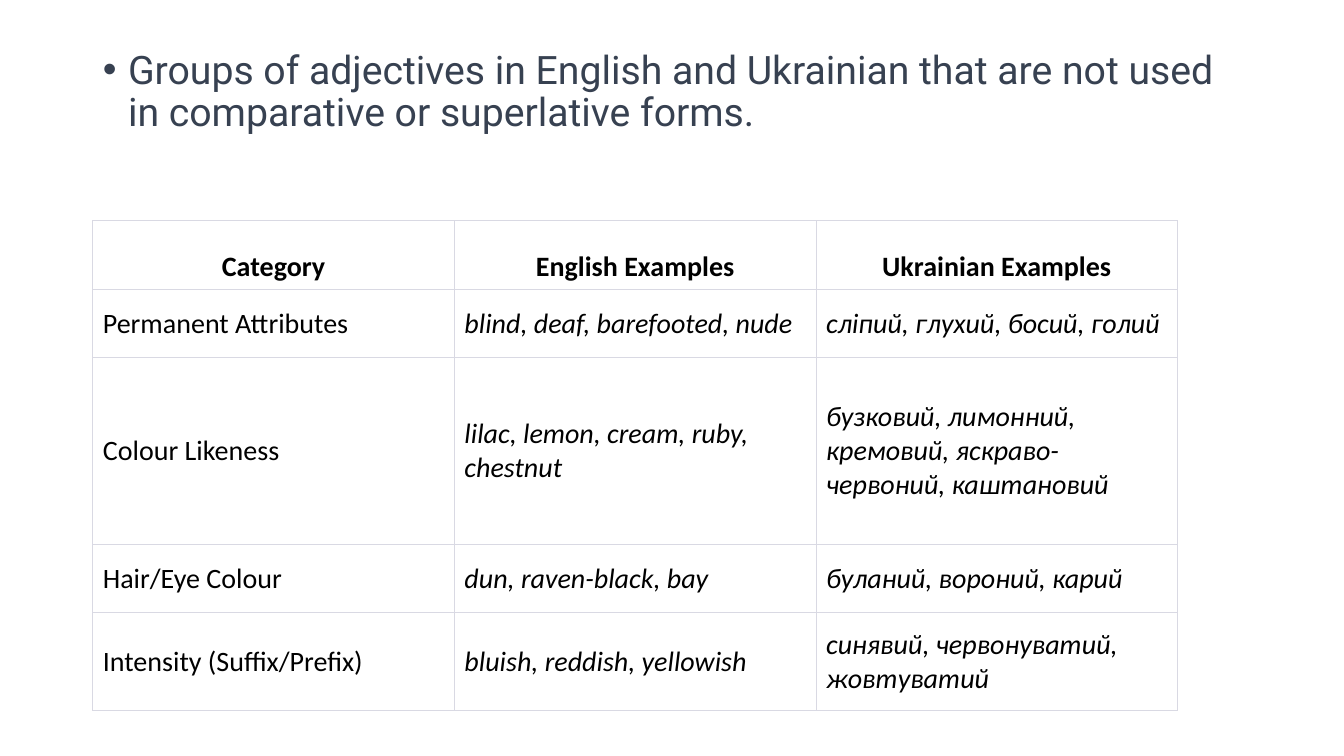
from dataclasses import dataclass

from pptx import Presentation
from pptx import util as u
from pptx.dml.color import RGBColor
from pptx.enum import text
from pptx.oxml import parse_xml
from pptx.oxml.ns import nsdecls


@dataclass(frozen=True)
class Theme:
    heading_font: str = "Roboto"
    table_font: str = "Calibri"
    heading_size: int = 28
    table_size: int = 20
    heading_color: str = "374151"
    table_color: str = "000000"
    border_color: str = "D9D9E3"
    side_border: float = 0.75
    row_border: float = 1


THEME = Theme()

HEADING = ("Groups of adjectives in English and Ukrainian that are not used "
           "in comparative or superlative forms.")
ROWS = [
    ("Category", "English Examples", "Ukrainian Examples"),
    ("Permanent Attributes", "blind, deaf, barefooted, nude",
     "сліпий, глухий, босий, голий"),
    ("Colour Likeness", "lilac, lemon, cream, ruby, chestnut",
     "бузковий, лимонний, кремовий, яскраво-червоний, каштановий"),
    ("Hair/Eye Colour", "dun, raven-black, bay", "буланий, вороний, карий"),
    ("Intensity (Suffix/Prefix)", "bluish, reddish, yellowish",
     "синявий, червонуватий, жовтуватий"),
]
ROW_HEIGHTS = [0.68, 0.68, 1.85, 0.68, 0.97]


def style_font(font, name, size, color):
    font.name = name
    font.size = u.Pt(size)
    font.color.rgb = RGBColor.from_string(color)


def add_bullet(paragraph, indent):
    """Give the paragraph a round bullet hanging by the indent."""
    properties = paragraph._p.get_or_add_pPr()
    properties.set("marL", str(indent))
    properties.set("indent", str(-indent))
    properties.append(parse_xml(f'<a:buFont {nsdecls("a")} typeface="Arial"/>'))
    properties.append(parse_xml(f'<a:buChar {nsdecls("a")} char="•"/>'))


def set_borders(cell, top, bottom):
    """Draw the four edges of a cell; top and bottom are widths in points."""
    properties = cell._tc.get_or_add_tcPr()
    widths = {"lnL": THEME.side_border, "lnR": THEME.side_border,
              "lnT": top, "lnB": bottom}
    for position, (edge, width) in enumerate(widths.items()):
        properties.insert(position, parse_xml(
            f'<a:{edge} {nsdecls("a")} w="{u.Pt(width)}"><a:solidFill>'
            f'<a:srgbClr val="{THEME.border_color}"/></a:solidFill></a:{edge}>'))


def fill_heading(placeholder, left, top, width, height):
    placeholder.left, placeholder.top = left, top
    placeholder.width, placeholder.height = width, height
    frame = placeholder.text_frame
    frame.text = HEADING
    frame.word_wrap = True
    frame.auto_size = text.MSO_AUTO_SIZE.NONE
    frame.vertical_anchor = text.MSO_ANCHOR.TOP
    paragraph = frame.paragraphs[0]
    paragraph.line_spacing = 0.9
    paragraph.space_before = u.Pt(10)
    add_bullet(paragraph, u.Inches(0.25))
    style_font(paragraph.runs[0].font, THEME.heading_font,
               THEME.heading_size, THEME.heading_color)


def fill_cell(cell, content, is_header, is_example):
    cell.text = content
    cell.fill.background()
    cell.vertical_anchor = text.MSO_ANCHOR.BOTTOM if is_header else text.MSO_ANCHOR.MIDDLE
    cell.margin_left = cell.margin_right = u.Inches(0.1)
    cell.margin_top = cell.margin_bottom = u.Inches(0.05)
    paragraph = cell.text_frame.paragraphs[0]
    paragraph.alignment = text.PP_ALIGN.CENTER if is_header else text.PP_ALIGN.LEFT
    font = paragraph.runs[0].font
    style_font(font, THEME.table_font, THEME.table_size, THEME.table_color)
    font.bold = is_header
    font.italic = is_example and not is_header


def add_adjective_table(slide, left, top, width, height):
    table = slide.shapes.add_table(len(ROWS), len(ROWS[0]),
                                   left, top, width, height).table
    table.first_row = table.horz_banding = False
    for row, row_height in zip(table.rows, ROW_HEIGHTS):
        row.height = u.Inches(row_height)
    last = len(ROWS) - 1
    for row_index, contents in enumerate(ROWS):
        for column_index, content in enumerate(contents):
            cell = table.cell(row_index, column_index)
            fill_cell(cell, content, row_index == 0, column_index > 0)
            set_borders(
                cell,
                top=THEME.side_border if row_index == 0 else THEME.row_border,
                bottom=THEME.side_border if row_index == last else THEME.row_border)


def add_adjectives_slide(presentation):
    slide = presentation.slides.add_slide(
        presentation.slide_layouts.get_by_name("Title and Content"))
    title = slide.shapes.title
    title.element.getparent().remove(title.element)
    left = u.Inches(0.92)
    fill_heading(slide.placeholders[1], left, u.Inches(0.45),
                 u.Inches(11.5), u.Inches(6.3))
    add_adjective_table(slide, left, u.Inches(2.19),
                        u.Inches(10.76), u.Inches(sum(ROW_HEIGHTS)))


def main():
    presentation = Presentation()
    presentation.slide_width = u.Inches(13.33)
    presentation.slide_height = u.Inches(7.5)
    add_adjectives_slide(presentation)
    presentation.save("out.pptx")


if __name__ == "__main__":
    main()
